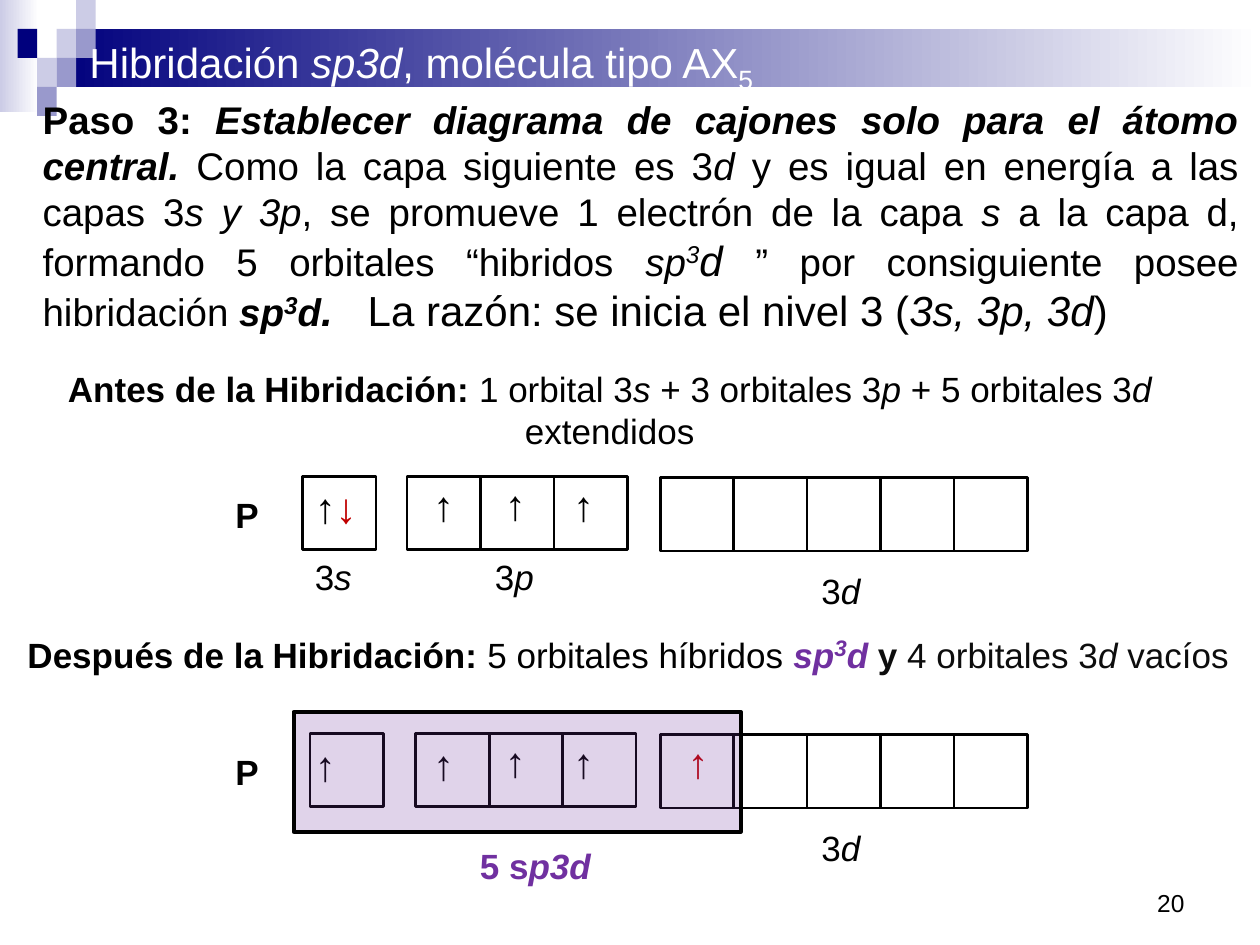
from lxml.etree import SubElement
from pptx import Presentation
from pptx.dml.color import RGBColor
from pptx.enum.shapes import MSO_SHAPE
from pptx.enum.text import MSO_ANCHOR, MSO_AUTO_SIZE, PP_ALIGN
from pptx.oxml.ns import qn
from pptx.util import Inches, Pt

COLORS = {"navy": "00007D", "pale": "CCCCE6", "mid": "9999CC", "white": "FFFFFF",
          "black": "000000", "red": "C00000", "purple": "7030A0", "ink": "0D0D0D"}

BANDS = [((0, 0, 0.31, 0.89), "pale"), ((0.45, 0.23, 9.55, 0.46), "navy")]
MOSAIC = [(2, 1, "pale"), (3, 0, "pale"), (3, 1, "mid"), (1, 2, "pale"),
          (0, 1, "navy"), (2, 2, "mid"), (1, 3, "mid")]
MOSAIC_LEFT, MOSAIC_W, MOSAIC_H = 0.14, 0.155, 0.23

# styles
TITLE = [("Hibridación ", "", 24, "white"), ("sp3d", "i", 24, "white"),
         (", molécula tipo AX", "", 24, "white"), ("5", "_", 26, "white")]
STEP = [("Paso 3: ", "b", 22),
        ("Establecer diagrama de cajones solo para el átomo central. ", "bi", 22),
        ("Como la capa siguiente es 3", "", 22), ("d ", "i", 22),
        ("y es igual en energía a las capas 3", "", 22), ("s y 3p", "i", 22),
        (", se promueve 1 electrón de la capa ", "", 22), ("s", "i", 22),
        (" a la capa d, formando 5 orbitales “hibridos ", "", 22), ("sp", "i", 22),
        ("3", "i^", 24), ("d ", "i", 24),
        ("” por consiguiente posee hibridación ", "", 22), ("sp", "bi", 22),
        ("3", "bi^", 24), ("d", "bi", 22), (".   ", "bi", 24),
        ("La razón: se inicia el nivel 3 (", "", 24), ("3s, 3p, 3d", "i", 24),
        (")", "", 24)]
BEFORE = [("Antes de la Hibridación: ", "b"), ("1 orbital 3",), ("s ", "i"),
          ("+ 3 orbitales 3",), ("p", "i"), (" + 5 orbitales 3",), ("d ", "i"),
          ("extendidos",)]
AFTER = [("Después de la Hibridación: ", "b"), ("5 orbitales híbridos ",),
         ("sp", "bi", 20, "purple"), ("3", "bi^", 22, "purple"),
         ("d ", "bi", 20, "purple"), ("y ", "b", 20, "ink"),
         ("4 orbitales 3", "", 20, "ink"), ("d", "i", 20, "ink"),
         (" vacíos", "", 20, "ink")]
PARAGRAPHS = [((0.24, 0.71, 9.69, 2.02), STEP, PP_ALIGN.JUSTIFY),
              ((0.04, 2.87, 9.6, 0.77), BEFORE, PP_ALIGN.CENTER),
              ((0.04, 4.95, 9.89, 0.44), AFTER, PP_ALIGN.CENTER),
              ((7.17, 7, 2.33, 0.35), [("20", "", 14)], PP_ALIGN.RIGHT)]

UP, UP_RED, DOWN = ("↑", "b", 24), ("↑", "b", 24, "red"), ("↓", "b", 24, "red")
CELL = 0.583
DIAGRAMS = [
    {"top": 3.78, "orbitals": [(2.4, 1), (3.23, 3), (5.24, 5)],
     "electrons": [(2.4, -0.01, 0.53, [UP, DOWN]), (3.34, -0.02, 0.37, [UP]),
                   (3.91, -0.03, 0.37, [UP]), (4.45, -0.02, 0.37, [UP])],
     "labels": [(2.4, 0.58, 0.5, [("3",), ("s", "i")]),
                (3.83, 0.58, 0.51, [("3",), ("p", "i")])]},
    {"top": 5.82, "orbitals": [(2.46, 1), (3.3, 3), (5.24, 5)],
     "electrons": [(2.4, 0, 0.37, [UP]), (3.34, -0.01, 0.37, [UP]),
                   (3.91, -0.03, 0.37, [UP]), (4.45, -0.02, 0.37, [UP]),
                   (5.36, -0.02, 0.37, [UP_RED])],
     "labels": [(3.71, 0.83, 1.09, [("5 s", "b", 20, "purple"),
                                    ("p3d", "bi", 20, "purple")])]},
]
COMMON_LABELS = [(1.77, 0.09, 0.39, [("P", "b")]),
                 (6.42, 0.69, 0.51, [("3",), ("d", "i")])]
HYBRID_BOX = (2.33, 5.65, 3.55, 0.95)


def rgb(name):
    return RGBColor.from_string(COLORS[name])


def write(tf, runs, align=PP_ALIGN.LEFT, wrap=True):
    tf.word_wrap = wrap
    tf.auto_size = MSO_AUTO_SIZE.NONE
    tf.vertical_anchor = MSO_ANCHOR.TOP
    p = tf.paragraphs[0]
    p.alignment = align
    for text, *look in runs:
        style, size, color = look + ["", 20, "black"][len(look):]
        r = p.add_run()
        r.text = text
        r.font.name = "Arial"
        r.font.size = Pt(size)
        r.font.bold = "b" in style
        r.font.italic = "i" in style
        r.font.color.rgb = rgb(color)
        for mark, shift in (("^", "30000"), ("_", "-25000")):
            if mark in style:
                r.font._element.set("baseline", shift)


def add_text(s, box, runs, align=PP_ALIGN.LEFT, wrap=True):
    write(s.shapes.add_textbox(*map(Inches, box)).text_frame, runs, align, wrap)


def add_rect(s, box, fill=None, line=None):
    sp = s.shapes.add_shape(MSO_SHAPE.RECTANGLE, *map(Inches, box))
    sp.shadow.inherit = False
    if fill:
        sp.fill.solid()
        sp.fill.fore_color.rgb = rgb(fill)
    else:
        sp.fill.background()
    if line:
        sp.line.color.rgb = rgb("black")
        sp.line.width = Pt(line)
    else:
        sp.line.fill.background()
    return sp


def add_band(s, box, color):
    fill = add_rect(s, box).fill
    fill.gradient()
    fill.gradient_angle = 0
    for stop, name in zip(fill.gradient_stops, (color, "white")):
        stop.color.rgb = rgb(name)


def add_diagram(s, diagram):
    top = diagram["top"]
    for left, count in diagram["orbitals"]:
        row_top = top + 0.01 if count == 5 else top
        for i in range(count):
            add_rect(s, (left + i * CELL, row_top, CELL, CELL), line=1.5)
    for left, dy, width, runs in diagram["electrons"]:
        add_text(s, (left, top + dy, width, 0.5), runs, wrap=False)
    for left, dy, width, runs in COMMON_LABELS + diagram["labels"]:
        add_text(s, (left, top + dy, width, 0.44), runs, wrap=False)


def main():
    prs = Presentation()
    prs.slide_width, prs.slide_height = Inches(10), Inches(7.5)
    s = prs.slides.add_slide(prs.slide_layouts[5])

    for box, color in BANDS:
        add_band(s, box, color)
    for col, row, color in MOSAIC:
        add_rect(s, (MOSAIC_LEFT + col * MOSAIC_W, row * MOSAIC_H, MOSAIC_W, MOSAIC_H), color)

    title = s.shapes.title
    title.left, title.top, title.width, title.height = map(Inches, (0.61, 0.21, 6.04, 0.5))
    write(title.text_frame, TITLE)
    s.shapes._spTree.append(title._element)

    for box, runs, align in PARAGRAPHS:
        add_text(s, box, runs, align)
    for diagram in DIAGRAMS:
        add_diagram(s, diagram)

    hybrid = add_rect(s, HYBRID_BOX, "purple", 2.25)
    color = hybrid._element.spPr.find(qn("a:solidFill"))[0]
    SubElement(color, qn("a:alpha")).set("val", "21000")

    prs.save("out.pptx")


if __name__ == "__main__":
    main()
